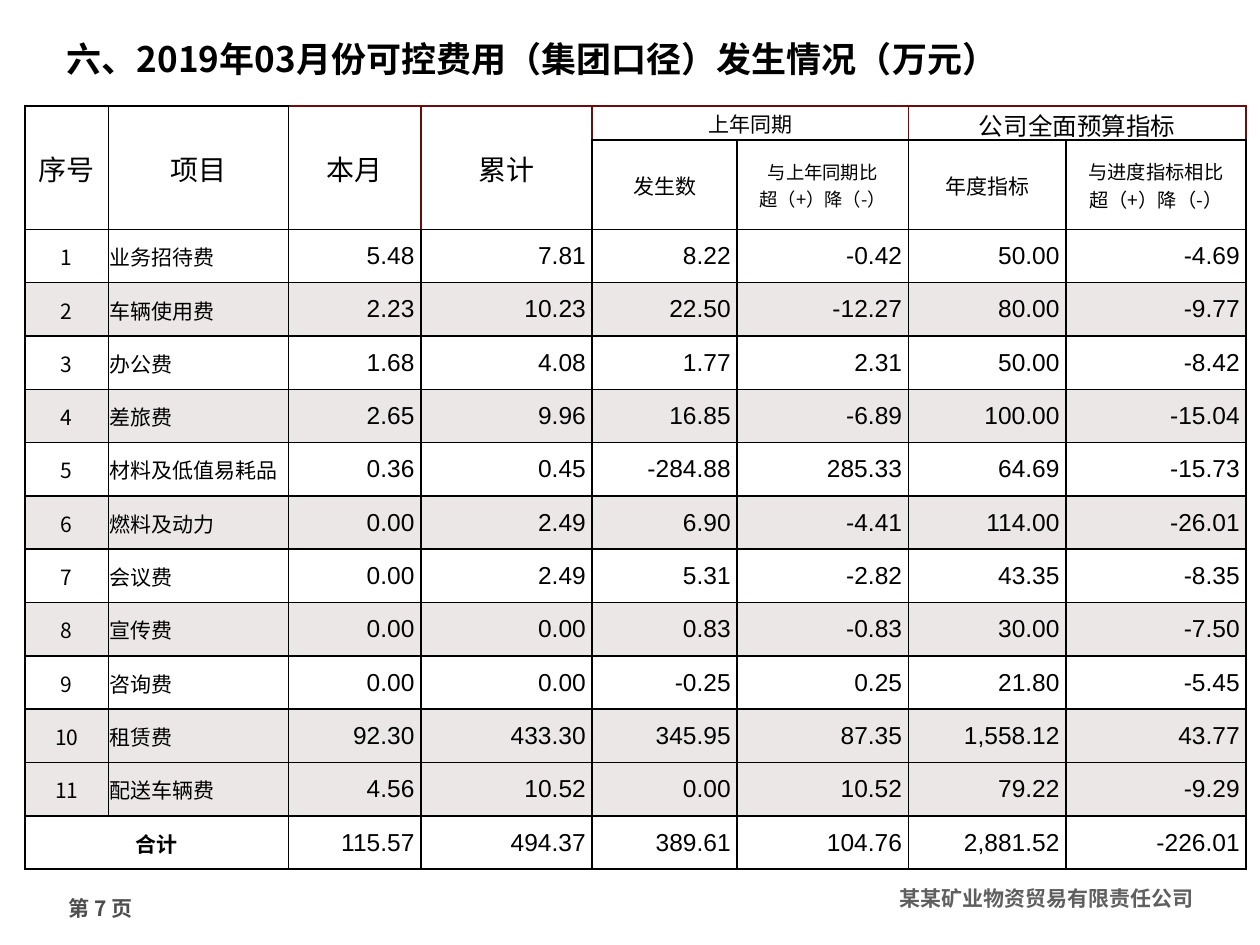
import pptx
import pptx.util
from lxml import etree
from pptx.dml.color import RGBColor
from pptx.enum.shapes import MSO_SHAPE
from pptx.enum.text import MSO_ANCHOR, MSO_AUTO_SIZE, PP_ALIGN
from pptx.oxml.ns import qn

BLACK = RGBColor(0x00, 0x00, 0x00)
MAROON = RGBColor(0x69, 0x0E, 0x0E)
BAND = RGBColor(0xEB, 0xE7, 0xE7)
PAGE_GRAY = RGBColor(0x4D, 0x4D, 0x4D)
FOOTER_GRAY = RGBColor(0x5F, 0x5F, 0x5F)
CJK, LATIN = "Noto Sans CJK SC", "Arial"

COLUMNS = [0.66, 1.43, 1.05, 1.36, 1.15, 1.36, 1.25, 1.43]
HEADER_ROWS = [0.27, 0.71]
# (row, column, last row, last column, text, size)
HEADERS = [
    (0, 0, 1, 0, "序号", 16),
    (0, 1, 1, 1, "项目", 16),
    (0, 2, 1, 2, "本月", 16),
    (0, 3, 1, 3, "累计", 16),
    (0, 4, 0, 5, "上年同期", 12),
    (0, 6, 0, 7, "公司全面预算指标", 14),
    (1, 4, 1, 4, "发生数", 12),
    (1, 5, 1, 5, "与上年同期比\v超（+）降（-）", 10.5),
    (1, 6, 1, 6, "年度指标", 12),
    (1, 7, 1, 7, "与进度指标相比\v超（+）降（-）", 11),
]
EXPENSES = [
    ("业务招待费", "5.48", "7.81", "8.22", "-0.42", "50.00", "-4.69"),
    ("车辆使用费", "2.23", "10.23", "22.50", "-12.27", "80.00", "-9.77"),
    ("办公费", "1.68", "4.08", "1.77", "2.31", "50.00", "-8.42"),
    ("差旅费", "2.65", "9.96", "16.85", "-6.89", "100.00", "-15.04"),
    ("材料及低值易耗品", "0.36", "0.45", "-284.88", "285.33", "64.69", "-15.73"),
    ("燃料及动力", "0.00", "2.49", "6.90", "-4.41", "114.00", "-26.01"),
    ("会议费", "0.00", "2.49", "5.31", "-2.82", "43.35", "-8.35"),
    ("宣传费", "0.00", "0.00", "0.83", "-0.83", "30.00", "-7.50"),
    ("咨询费", "0.00", "0.00", "-0.25", "0.25", "21.80", "-5.45"),
    ("租赁费", "92.30", "433.30", "345.95", "87.35", "1,558.12", "43.77"),
    ("配送车辆费", "4.56", "10.52", "0.00", "10.52", "79.22", "-9.29"),
]
TOTALS = ("115.57", "494.37", "389.61", "104.76", "2,881.52", "-226.01")
BANDED = {2, 4, 6, 8, 10, 11}


def inches(*lengths):
    return [pptx.util.Inches(length) for length in lengths]


def write(tf, text, size, color=BLACK, font=CJK, bold=False, align=PP_ALIGN.LEFT):
    tf.text = text
    p = tf.paragraphs[0]
    p.alignment = align
    for r in p.runs:
        r.font.size = pptx.util.Pt(size)
        r.font.bold = bold
        r.font.color.rgb = color
        r.font.name = font
        etree.SubElement(r.font._element, qn("a:ea")).set("typeface", font)


def write_cell(cell, text, size, align=PP_ALIGN.CENTER, bold=False):
    write(cell.text_frame, text, size, bold=bold, align=align)
    cell.margin_left = cell.margin_right = cell.margin_top = pptx.util.Inches(0.01)


def write_numbers(table, row, values):
    for col, value in enumerate(values, 2):
        cell = table.cell(row, col)
        write(cell.text_frame, value, 14, font=LATIN, align=PP_ALIGN.RIGHT)
        cell.margin_left = cell.margin_top = 0
        cell.margin_right = pptx.util.Inches(0.05)


def set_borders(cell, **colors):
    """Draw 1 pt borders; keywords L, R, T, B give their colours."""
    tcPr = cell._tc.get_or_add_tcPr()
    for side in "LRTB":
        ln = etree.SubElement(tcPr, qn("a:ln" + side), w="12700")
        fill = etree.SubElement(ln, qn("a:solidFill"))
        etree.SubElement(fill, qn("a:srgbClr"), val=str(colors.get(side, BLACK)))


def add_title(s, box):
    title = s.shapes.title
    title.left, title.top, title.width, title.height = inches(*box)
    tf = title.text_frame
    tf.auto_size = MSO_AUTO_SIZE.NONE
    tf.vertical_anchor = MSO_ANCHOR.MIDDLE
    write(tf, "六、2019年03月份可控费用（集团口径）发生情况（万元）", 20, bold=True)


def add_expense_table(s, box):
    row_count = len(HEADER_ROWS) + len(EXPENSES) + 1
    frame = s.shapes.add_table(row_count, len(COLUMNS), *inches(*box))
    table = frame.table
    table.first_row = table.horz_banding = False
    for column, width in zip(table.columns, COLUMNS):
        column.width = pptx.util.Inches(width)
    body_row = (box[3] - sum(HEADER_ROWS)) / (len(EXPENSES) + 1)
    heights = HEADER_ROWS + [body_row] * (len(EXPENSES) + 1)
    for row, height in zip(table.rows, heights):
        row.height = pptx.util.Inches(height)

    for row in range(row_count):
        for col in range(len(COLUMNS)):
            cell = table.cell(row, col)
            cell.vertical_anchor = MSO_ANCHOR.MIDDLE
            cell.margin_bottom = 0
            if row == 0 and col >= 2:
                set_borders(cell, L=MAROON if col > 2 else BLACK, T=MAROON, R=MAROON)
            else:
                set_borders(cell)
            if row - 1 in BANDED:
                cell.fill.solid()
                cell.fill.fore_color.rgb = BAND
            else:
                cell.fill.background()

    for row, col, last_row, last_col, text, size in HEADERS:
        cell = table.cell(row, col)
        if (row, col) != (last_row, last_col):
            cell.merge(table.cell(last_row, last_col))
        write_cell(cell, text, size)
    for number, (name, *values) in enumerate(EXPENSES, 1):
        row = number + 1
        write_cell(table.cell(row, 0), str(number), 12)
        write_cell(table.cell(row, 1), name, 12, PP_ALIGN.LEFT)
        write_numbers(table, row, values)
    last = row_count - 1
    table.cell(last, 0).merge(table.cell(last, 1))
    write_cell(table.cell(last, 0), "合计", 12, bold=True)
    write_numbers(table, last, TOTALS)


def add_page_number(s, box):
    sp = s.shapes.add_shape(MSO_SHAPE.ROUNDED_RECTANGLE, *inches(*box))
    sp.shadow.inherit = False
    sp.fill.background()
    sp.line.fill.background()
    tf = sp.text_frame
    tf.word_wrap = True
    tf.vertical_anchor = MSO_ANCHOR.TOP
    write(tf, "第 7 页", 12, PAGE_GRAY, bold=True)


def add_company_footer(s, box):
    tf = s.shapes.add_textbox(*inches(*box)).text_frame
    tf.word_wrap = True
    tf.vertical_anchor = MSO_ANCHOR.MIDDLE
    write(tf, "某某矿业物资贸易有限责任公司", 12, FOOTER_GRAY, bold=True,
          align=PP_ALIGN.RIGHT)


def main():
    prs = pptx.Presentation()
    prs.slide_width, prs.slide_height = inches(10, 7.5)
    s = prs.slides.add_slide(prs.slide_layouts[5])
    margin = 0.43
    content_width = 10 - 2 * margin
    add_page_number(s, (margin, 7.04, 0.76, 0.32))
    add_company_footer(s, (margin, 6.98, content_width, 0.3))
    add_title(s, (margin, 0.13, content_width, 0.67))
    add_expense_table(s, (0.2, 0.84, sum(COLUMNS), 6.06))
    prs.save("out.pptx")


if __name__ == "__main__":
    main()
